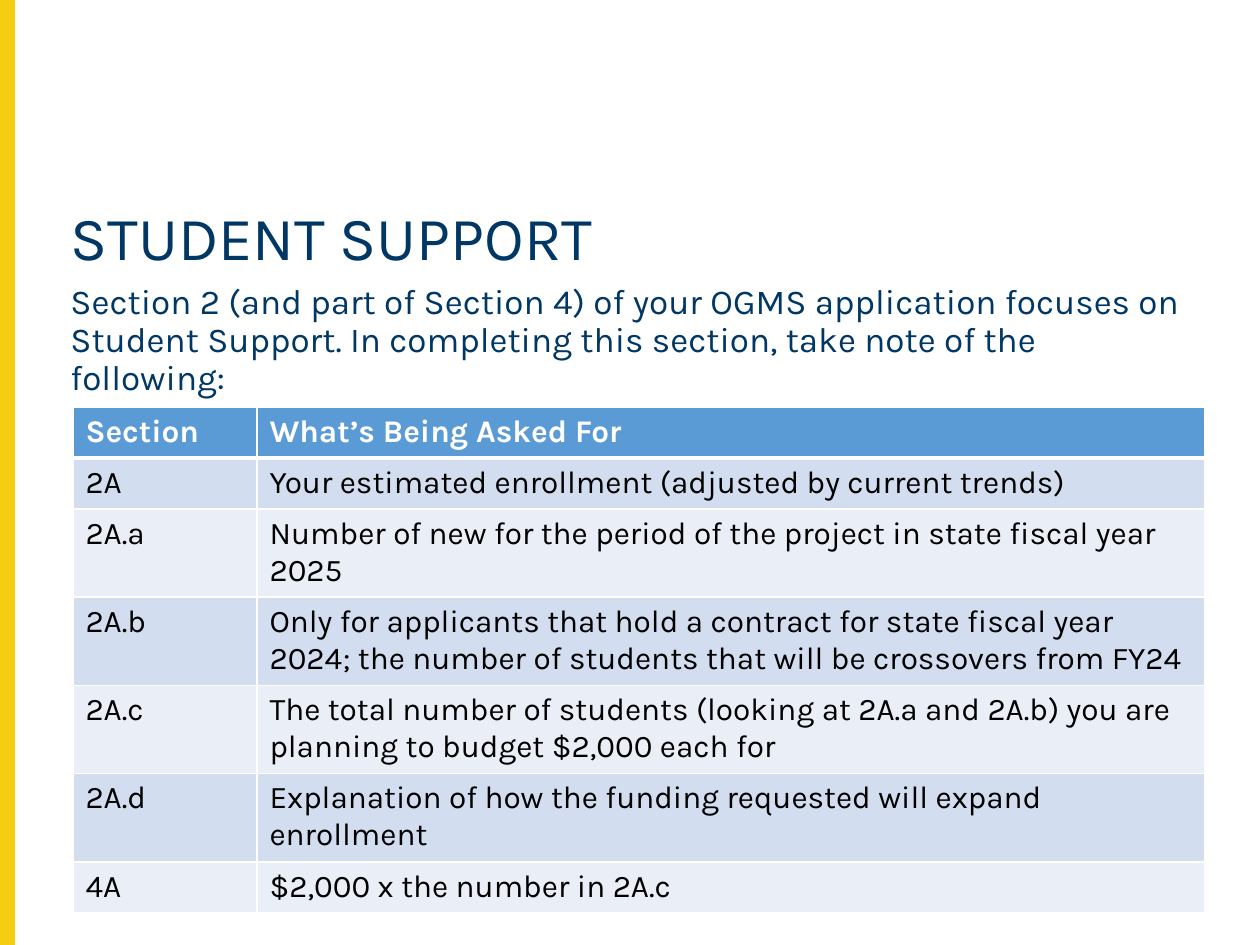
from dataclasses import dataclass

from lxml.etree import SubElement
from pptx import Presentation
from pptx.dml.color import RGBColor
from pptx.enum.shapes import MSO_SHAPE
from pptx.enum.text import MSO_ANCHOR
from pptx.oxml.ns import qn
from pptx.util import Cm, Pt


@dataclass(frozen=True)
class Theme:
    font: str = "Karla"
    navy: str = "003764"
    yellow: str = "F4CE12"
    white: str = "FFFFFF"
    black: str = "000000"
    header: str = "5B9BD5"
    bands: tuple = ("D2DEEF", "EAEFF7")
    title_size: int = 35
    body_size: int = 20
    table_size: int = 18
    rule: int = 1
    header_rule: int = 3


THEME = Theme()

TITLE = "STUDENT SUPPORT"
INTRO = ("Section 2 (and part of Section 4) of your OGMS application focuses on "
         "Student Support. In completing this section, take note of the following:")
ROWS = [
    ("Section", "What’s Being Asked For"),
    ("2A", "Your estimated enrollment (adjusted by current trends)"),
    ("2A.a", "Number of new for the period of the project in state fiscal year 2025"),
    ("2A.b", "Only for applicants that hold a contract for state fiscal year 2024; "
             "the number of students that will be crossovers from FY24"),
    ("2A.c", "The total number of students (looking at 2A.a and 2A.b) you are "
             "planning to budget $2,000 each for"),
    ("2A.d", "Explanation of how the funding requested will expand enrollment"),
    ("4A", "$2,000 x the number in 2A.c"),
]
COL_WIDTHS = (3.71, 19.11)
ROW_HEIGHT = 1.03


def rgb(value):
    return RGBColor.from_string(value)


def style(p, size, color, bold=False):
    p.font.name = THEME.font
    p.font.size = Pt(size)
    p.font.color.rgb = rgb(color)
    p.font.bold = bold


def add_text(slide, text, left, top, width, height, size):
    tf = slide.shapes.add_textbox(Cm(left), Cm(top), Cm(width), Cm(height)).text_frame
    tf.word_wrap = True
    tf.vertical_anchor = MSO_ANCHOR.TOP
    p = tf.paragraphs[0]
    p.text = text
    p.line_spacing = 0.9
    style(p, size, THEME.navy)


def add_side_bar(slide, height):
    sp = slide.shapes.add_shape(MSO_SHAPE.RECTANGLE, 0, 0, Cm(0.28), height)
    sp.shadow.inherit = False
    sp.fill.solid()
    sp.fill.fore_color.rgb = rgb(THEME.yellow)
    sp.line.color.rgb = rgb(THEME.yellow)
    sp.line.width = Pt(1)


def set_borders(cell, top, bottom):
    """Draw white rules round a cell; must run before the cell is filled."""
    tc_pr = cell._tc.get_or_add_tcPr()
    sides = {"L": THEME.rule, "R": THEME.rule, "T": top, "B": bottom}
    for side, width in sides.items():
        ln = SubElement(tc_pr, qn(f"a:ln{side}"), w=str(Pt(width)))
        SubElement(SubElement(ln, qn("a:solidFill")), qn("a:srgbClr"), val=THEME.white)


def add_section_table(slide, left, top):
    shape = slide.shapes.add_table(len(ROWS), len(COL_WIDTHS), Cm(left), Cm(top),
                                   Cm(sum(COL_WIDTHS)), Cm(ROW_HEIGHT * len(ROWS)))
    table = shape.table
    for col, width in zip(table.columns, COL_WIDTHS):
        col.width = Cm(width)
    for i, texts in enumerate(ROWS):
        table.rows[i].height = Cm(ROW_HEIGHT)
        is_header = i == 0
        fill = THEME.header if is_header else THEME.bands[(i - 1) % 2]
        for j, text in enumerate(texts):
            cell = table.cell(i, j)
            set_borders(cell,
                        top=THEME.header_rule if i == 1 else THEME.rule,
                        bottom=THEME.header_rule if is_header else THEME.rule)
            cell.fill.solid()
            cell.fill.fore_color.rgb = rgb(fill)
            cell.text = text
            style(cell.text_frame.paragraphs[0], THEME.table_size,
                  THEME.white if is_header else THEME.black, bold=is_header)


def main():
    prs = Presentation()
    prs.slide_width, prs.slide_height = Cm(25.4), Cm(19.05)
    slide = prs.slides.add_slide(prs.slide_layouts[6])
    add_side_bar(slide, prs.slide_height)
    add_text(slide, TITLE, 1.17, 4.06, 23.7, 2, THEME.title_size)
    add_text(slide, INTRO, 1.17, 5.61, 23.1, 2.34, THEME.body_size)
    add_section_table(slide, 1.47, 8.2)
    prs.save("out.pptx")


if __name__ == "__main__":
    main()
